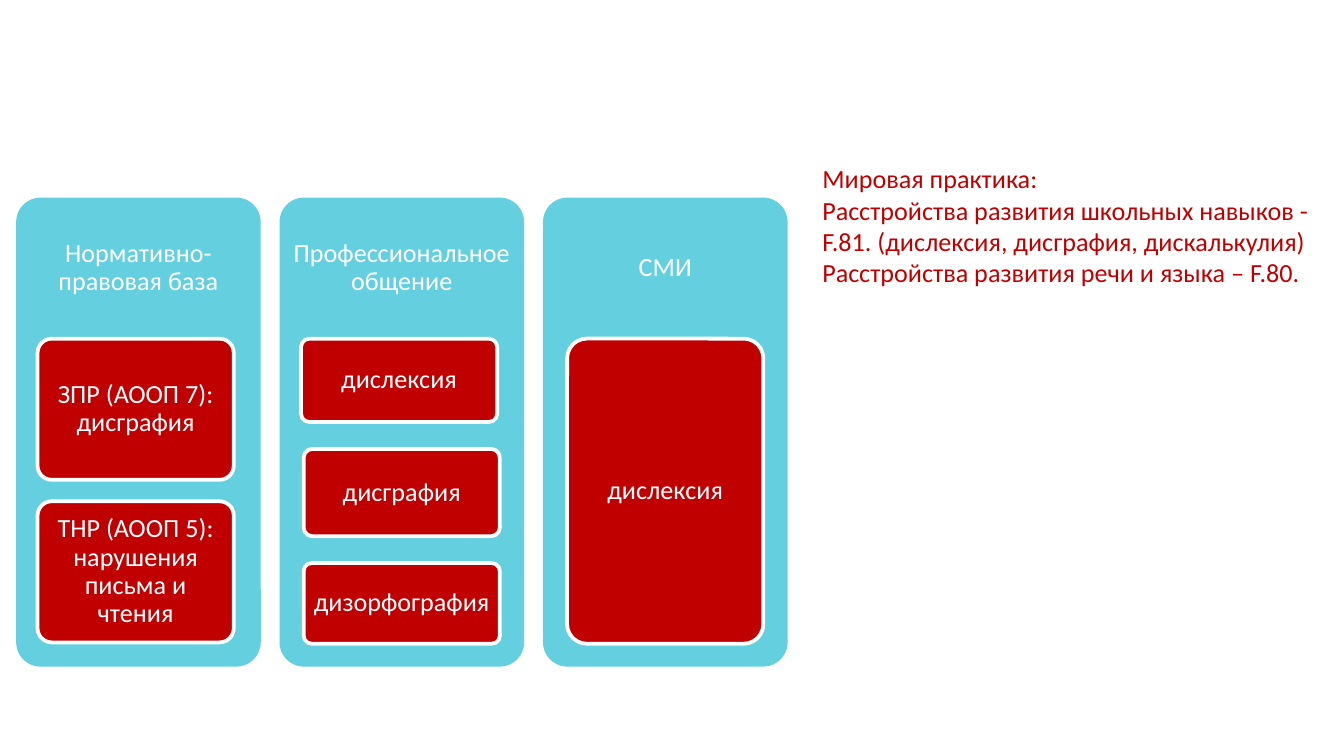
"""Build a slide comparing terms for learning disorders in three settings."""
import pptx
import pptx.util
import pptx.dml.color
import pptx.enum.shapes
import pptx.enum.text

Inches = pptx.util.Inches
Pt = pptx.util.Pt
RGBColor = pptx.dml.color.RGBColor
TEAL = RGBColor(0x64, 0xD0, 0xDF)
RED = RGBColor(0xC0, 0x00, 0x00)
WHITE = RGBColor(0xFF, 0xFF, 0xFF)

TOP, WIDE, TALL = 1.47, 1.82, 3.49
STEP, HEAD, CARD = 1.96, 1.05, 1.46

PANELS = [
    ("Нормативно-правовая база", [
        (0.28, 2.52, 1.05, "ЗПР (АООП 7): дисграфия"),
        (0.28, 3.73, 1.05, "ТНР (АООП 5): нарушения письма и чтения"),
    ]),
    ("Профессиональное общение", [
        (2.24, 2.52, 0.62, "дислексия"),
        (2.26, 3.34, 0.65, "дисграфия"),
        (2.26, 4.19, 0.6, "дизорфография"),
    ]),
    ("СМИ", [(4.22, 2.52, 2.27, "дислексия")]),
]
NOTES = [
    "Мировая практика:",
    "Расстройства развития школьных навыков - F.81. (дислексия, дисграфия, дискалькулия)",
    "Расстройства развития речи и языка – F.80.",
]

deck = pptx.Presentation()
deck.slide_width = Inches(10)
deck.slide_height = Inches(10 * 9 / 16)
slide = deck.slides.add_slide(deck.slide_layouts[6])
shapes = slide.shapes


def add_block(left, top, width, height, fill):
    block = shapes.add_shape(
        pptx.enum.shapes.MSO_SHAPE.ROUNDED_RECTANGLE,
        Inches(left), Inches(top), Inches(width), Inches(height))
    block.adjustments[0] = 0.1
    block.shadow.inherit = False
    block.fill.solid()
    block.fill.fore_color.rgb = fill
    return block


def set_label(shape, text, side, edge):
    frame = shape.text_frame
    frame.word_wrap = True
    frame.vertical_anchor = pptx.enum.text.MSO_ANCHOR.MIDDLE
    frame.margin_left = frame.margin_right = Inches(side)
    frame.margin_top = frame.margin_bottom = Inches(edge)
    para = frame.paragraphs[0]
    para.text = text
    para.alignment = pptx.enum.text.PP_ALIGN.CENTER
    para.line_spacing = 0.9
    para.font.name = "Calibri"
    para.font.size = Pt(14)
    para.font.color.rgb = WHITE


box = shapes.add_textbox(Inches(6.02), Inches(1.16), Inches(3.86), Inches(1.28))
frame = box.text_frame
frame.word_wrap = True
frame.text = "\n".join(NOTES)
for para in frame.paragraphs:
    para.font.name = "Calibri"
    para.font.size = Pt(14)
    para.font.color.rgb = RED

for index, (title, cards) in enumerate(PANELS):
    left = 0.12 + index * STEP
    panel = add_block(left, TOP, WIDE, TALL, TEAL)
    panel.line.fill.background()
    head = shapes.add_textbox(Inches(left), Inches(TOP), Inches(WIDE), Inches(HEAD))
    set_label(head, title, 0.06, 0.06)
    for x, y, height, text in cards:
        card = add_block(x, y, CARD, height, RED)
        card.line.color.rgb = WHITE
        card.line.width = Pt(2)
        set_label(card, text, 0.04, 0.03)

deck.save("out.pptx")
